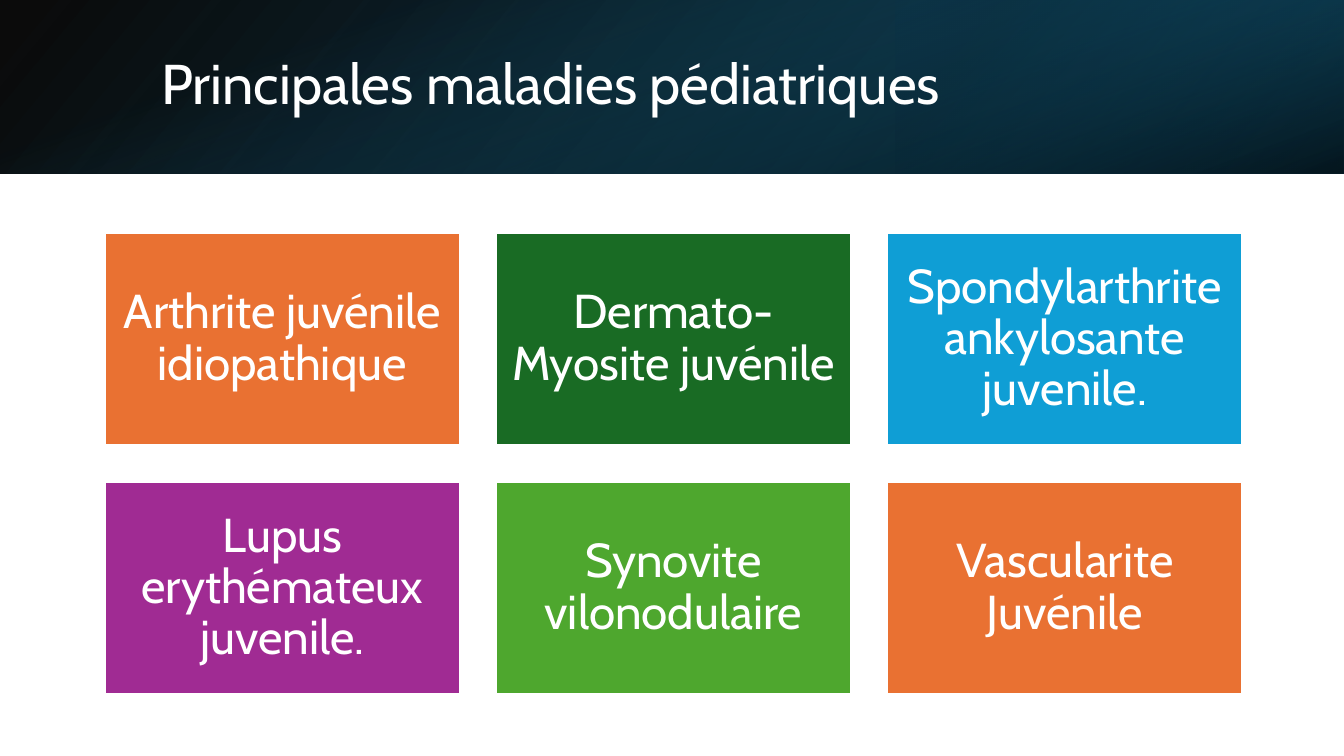
from lxml import etree
from pptx import Presentation
from pptx.dml.color import RGBColor
from pptx.enum.shapes import MSO_SHAPE
from pptx.enum.text import MSO_ANCHOR, PP_ALIGN
from pptx.oxml.ns import qn
from pptx.util import Inches, Pt

RECTANGLE = MSO_SHAPE.RECTANGLE
MIDDLE = MSO_ANCHOR.MIDDLE
LEFT, CENTER = PP_ALIGN.LEFT, PP_ALIGN.CENTER
FONT = "Cabin"
COLORS = {
    "white": "FFFFFF", "black": "000000", "navy": "104862",
    "deep": "0B3041", "teal": "156082", "orange": "E97132",
    "forest": "196B24", "blue": "0F9ED5", "purple": "A02B93",
    "green": "4EA72E",
}
WIDTH, HEIGHT, BANNER_HEIGHT = 13.33, 7.5, 1.72

deck = Presentation()
deck.slide_width, deck.slide_height = Inches(WIDTH), Inches(HEIGHT)
page = deck.slides.add_slide(deck.slide_layouts[6])


def color(name):
    return RGBColor.from_string(COLORS[name])


def write(box, text, size, align, inset):
    frame = box.text_frame
    frame.text = text
    frame.word_wrap = True
    frame.vertical_anchor = MIDDLE
    frame.margin_left = frame.margin_right = Inches(inset)
    para = frame.paragraphs[0]
    para.alignment = align
    para.line_spacing = 0.9
    span = para.runs[0]
    span.font.size = Pt(size)
    span.font.name = FONT
    span.font.color.rgb = color("white")


banner_layers = [
    (0, 40, [(0, "black", 96), (1, "navy", 100)]),
    (WIDTH * 2 / 3, 40, [(0.19, "deep", 68), (1, "teal", 79)]),
    (0, 70, [(0.23, "teal", 0), (0.99, "black", 74)]),
]
for left, angle, stops in banner_layers:
    layer = page.shapes.add_shape(
        RECTANGLE, Inches(left), 0, Inches(WIDTH - left), Inches(BANNER_HEIGHT))
    layer.shadow.inherit = False
    layer.line.fill.background()
    layer.fill.gradient()
    layer.fill.gradient_angle = 360 - angle
    for stop, (position, name, opacity) in zip(layer.fill.gradient_stops, stops):
        stop.position = position
        stop.color.rgb = color(name)
    shades = layer.element.spPr.iter(qn("a:srgbClr"))
    for shade, (position, name, opacity) in zip(list(shades), stops):
        etree.SubElement(shade, qn("a:alpha"), val=str(opacity * 1000))

title = page.shapes.add_textbox(Inches(1.5), Inches(0.38), Inches(10.98), Inches(0.96))
write(title, "Principales maladies pédiatriques", 40, LEFT, 0.1)

diseases = [
    ("Arthrite juvénile idiopathique", "orange"),
    ("Dermato-Myosite juvénile", "forest"),
    ("Spondylarthrite ankylosante juvenile.", "blue"),
    ("Lupus erythémateux juvenile.", "purple"),
    ("Synovite vilonodulaire", "green"),
    ("Vascularite Juvénile", "orange"),
]
COLUMNS = 3
GRID_LEFT, GRID_TOP = 1.04, 2.31
TILE_WIDTH, TILE_HEIGHT, GAP = 3.52, 2.11, 0.36
for index, (disease, fill) in enumerate(diseases):
    row, column = divmod(index, COLUMNS)
    tile = page.shapes.add_shape(
        RECTANGLE,
        Inches(GRID_LEFT + column * (TILE_WIDTH + GAP)),
        Inches(GRID_TOP + row * (TILE_HEIGHT + GAP)),
        Inches(TILE_WIDTH), Inches(TILE_HEIGHT))
    tile.shadow.inherit = False
    tile.fill.solid()
    tile.fill.fore_color.rgb = color(fill)
    tile.line.color.rgb = color("white")
    tile.line.width = Pt(1.5)
    write(tile, disease, 34, CENTER, 0.14)

deck.save("out.pptx")
